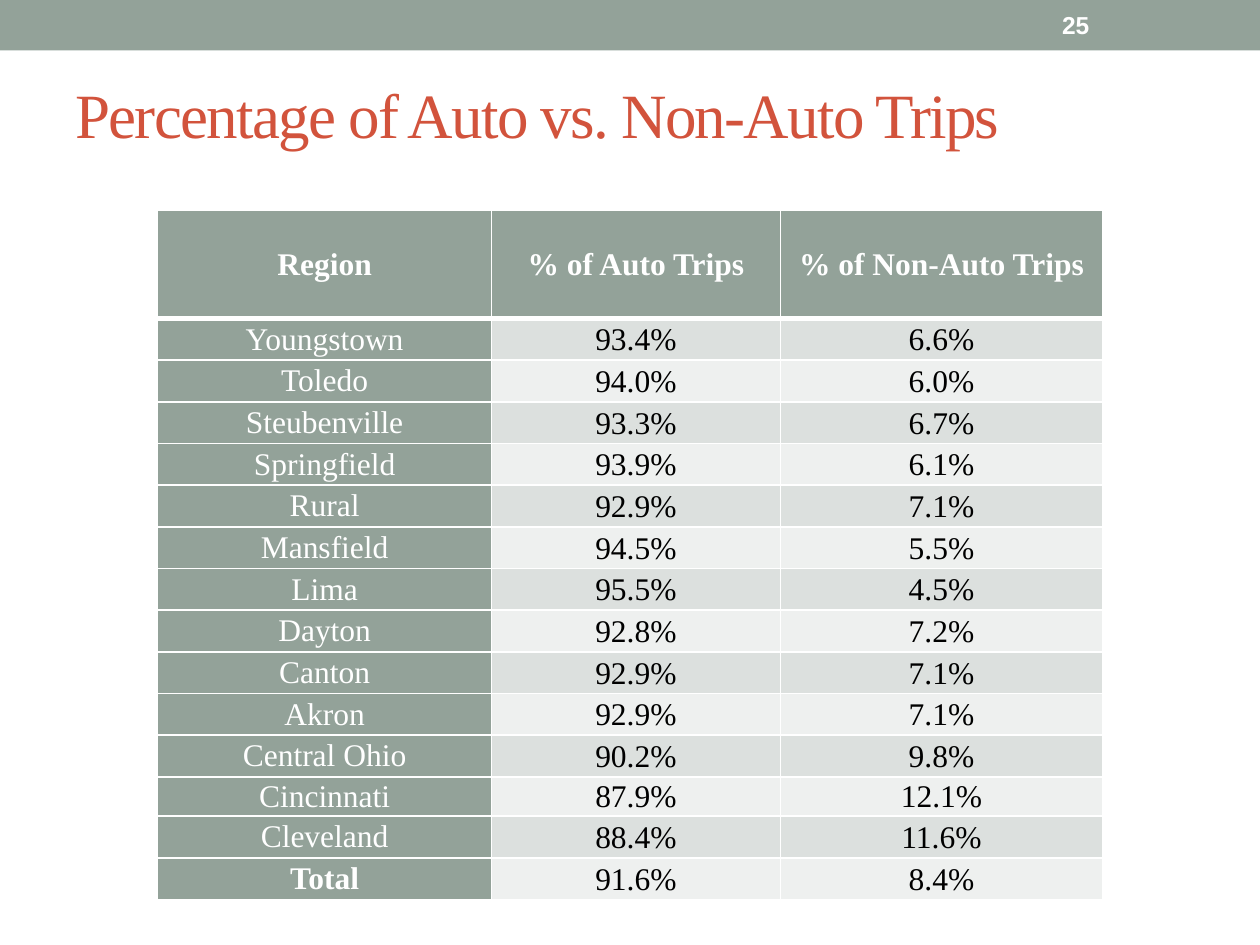
from lxml import etree
from pptx import Presentation
from pptx.dml.color import RGBColor
from pptx.enum.shapes import MSO_SHAPE
from pptx.enum.text import MSO_ANCHOR, PP_ALIGN
from pptx.oxml.ns import qn
from pptx.util import Cm, Pt

RECTANGLE = MSO_SHAPE.RECTANGLE
MIDDLE = MSO_ANCHOR.MIDDLE
CENTER = PP_ALIGN.CENTER

COLORS = {
    "sage": "93A299",
    "band_dark": "DCE0DE",
    "band_light": "EEF0EF",
    "title": "D2533C",
    "white": "FFFFFF",
    "black": "000000",
}
SERIF = "Times New Roman"
SANS = "Arial"

COLUMN_WIDTHS = (6.73, 5.82, 6.5)
HEADER_HEIGHT, ROW_HEIGHT, SHORT_ROW_HEIGHT = 2.18, 0.84, 0.79
HEADERS = ("Region", "% of Auto Trips", "% of Non-Auto Trips")
TRIPS = (
    ("Youngstown", "93.4%", "6.6%"),
    ("Toledo", "94.0%", "6.0%"),
    ("Steubenville", "93.3%", "6.7%"),
    ("Springfield", "93.9%", "6.1%"),
    ("Rural", "92.9%", "7.1%"),
    ("Mansfield", "94.5%", "5.5%"),
    ("Lima", "95.5%", "4.5%"),
    ("Dayton", "92.8%", "7.2%"),
    ("Canton", "92.9%", "7.1%"),
    ("Akron", "92.9%", "7.1%"),
    ("Central Ohio", "90.2%", "9.8%"),
    ("Cincinnati", "87.9%", "12.1%"),
    ("Cleveland", "88.4%", "11.6%"),
    ("Total", "91.6%", "8.4%"),
)


def rgb(name):
    return RGBColor.from_string(COLORS[name])


def style_font(font, name, size, color, bold=False):
    font.name = name
    font.size = Pt(size)
    font.bold = bold
    font.color.rgb = rgb(color)


def add_bar(slide, left, top, width, height, color):
    shape = slide.shapes.add_shape(RECTANGLE, Cm(left), Cm(top), Cm(width), Cm(height))
    shape.shadow.inherit = False
    shape.fill.solid()
    shape.fill.fore_color.rgb = rgb(color)
    shape.line.fill.background()


def add_text(slide, text, left, top, width, height, font, size, color,
             bold=False, spacing=0):
    shape = slide.shapes.add_textbox(Cm(left), Cm(top), Cm(width), Cm(height))
    frame = shape.text_frame
    frame.word_wrap = True
    frame.vertical_anchor = MIDDLE
    paragraph = frame.paragraphs[0]
    run = paragraph.add_run()
    run.text = text
    style_font(paragraph.font, font, size, color, bold)
    if spacing:
        run.font._element.set("spc", str(spacing * 100))


def set_borders(cell, top, bottom):
    """Draw white cell borders; top and bottom are widths in points."""
    properties = cell._tc.get_or_add_tcPr()
    widths = {"a:lnL": 1, "a:lnR": 1, "a:lnT": top, "a:lnB": bottom}
    for position, (tag, width) in enumerate(widths.items()):
        line = etree.Element(qn(tag), w=str(Pt(width)))
        fill = etree.SubElement(line, qn("a:solidFill"))
        etree.SubElement(fill, qn("a:srgbClr"), val=COLORS["white"])
        properties.insert(position, line)


def fill_cell(cell, text, fill, color, bold, side_margin, top_margin):
    cell.fill.solid()
    cell.fill.fore_color.rgb = rgb(fill)
    cell.vertical_anchor = MIDDLE
    cell.margin_left = cell.margin_right = Cm(side_margin)
    cell.margin_top, cell.margin_bottom = Cm(top_margin), 0
    cell.text = text
    paragraph = cell.text_frame.paragraphs[0]
    paragraph.alignment = CENTER
    style_font(paragraph.font, SERIF, 18, color, bold)


def add_trip_table(slide, left, top):
    rows = (HEADERS,) + TRIPS
    heights = [HEADER_HEIGHT] + [
        SHORT_ROW_HEIGHT if row[0] == "Cincinnati" else ROW_HEIGHT for row in TRIPS
    ]
    table = slide.shapes.add_table(
        len(rows), len(HEADERS), Cm(left), Cm(top),
        Cm(sum(COLUMN_WIDTHS)), Cm(sum(heights)),
    ).table
    for column, width in zip(table.columns, COLUMN_WIDTHS):
        column.width = Cm(width)
    for i, values in enumerate(rows):
        table.rows[i].height = Cm(heights[i])
        for j, text in enumerate(values):
            cell = table.cell(i, j)
            if i == 0 or j == 0:
                bold = i == 0 or text == "Total"
                fill_cell(cell, text, "sage", "white", bold, 0.18, 0)
            else:
                band = "band_dark" if i % 2 else "band_light"
                fill_cell(cell, text, band, "black", False, 0.03, 0.03)
            # The rule under the header is heavier than the rest
            set_borders(cell, 3 if i == 1 else 1, 3 if i == 0 else 1)


def main():
    presentation = Presentation()
    presentation.slide_width, presentation.slide_height = Cm(25.4), Cm(19.05)
    slide = presentation.slides.add_slide(presentation.slide_layouts[6])

    # Top bar with page number
    add_bar(slide, 0, 0, 25.4, 1.02, "sage")
    add_text(slide, "25", 21.16, 0.05, 2.97, 0.91, SANS, 14, "white", bold=True)

    # Title
    add_text(slide, "Percentage of Auto vs. Non-Auto Trips", 1.27, 0.76, 23.5, 3.05,
             SERIF, 36, "title", spacing=-1)

    # Trip shares by region
    add_trip_table(slide, 3.18, 4.24)

    presentation.save("out.pptx")


if __name__ == "__main__":
    main()
